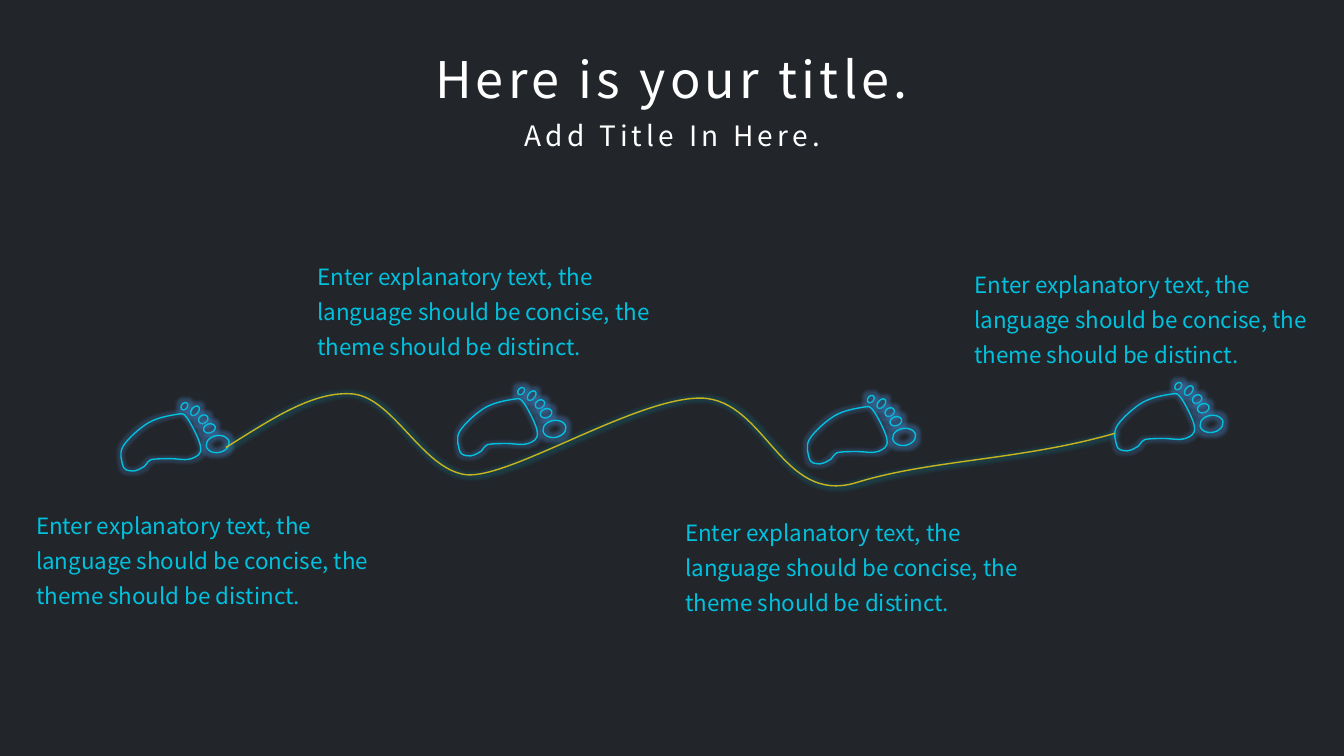
from lxml import etree
from pptx import Presentation
from pptx.dml.color import RGBColor
from pptx.enum.shapes import MSO_SHAPE
from pptx.enum.text import PP_ALIGN
from pptx.oxml.ns import qn
from pptx.util import Pt

OVAL = MSO_SHAPE.OVAL
LEFT, CENTER = PP_ALIGN.LEFT, PP_ALIGN.CENTER

BACKGROUND = RGBColor(0x22, 0x25, 0x2A)
WHITE = RGBColor(0xFF, 0xFF, 0xFF)
CYAN = RGBColor(0x00, 0xC1, 0xDE)
YELLOW = RGBColor(0xC8, 0xB4, 0x1E)
TOE_GLOW = RGBColor(0x44, 0x82, 0xC4)
FONT = "Noto Sans CJK SC"

# Content; every length is in points
TITLE = ("Here is your title.", (270.7, 31, 418.3, 51.1), 36)
SUBTITLE = ("Add Title In Here.", (347, 81.4, 266.4, 31.7), 20)
EXPLANATION = ("Enter explanatory text, the language should be concise, "
               "the theme should be distinct.")
EXPLANATION_SIZE = (269.3, 55.4)

# Each step: corner of the footprint, corner of its explanation
STEPS = [
    ((94.3, 290.9), (18.7, 356.4)),
    ((334.8, 280.1), (219.6, 178.6)),
    ((584.6, 285.8), (482.4, 361.4)),
    ((804.2, 276.5), (689, 184.3)),
]

# Each toe: left, top, width, height, rotation, relative to the footprint
TOES = [
    (35.3, -3.6, 4.3, 5.8, 38.7),
    (42.5, -1.4, 5, 7.9, 38.7),
    (48, 5, 5.8, 7.2, 54.8),
    (52, 10.8, 6.5, 8.6, 71.4),
    (55.1, 18, 12.2, 16.6, 79.7),
]

# Bezier outlines: a start point, then three points for each curve
SOLE = [
    (39.6, 7.9),
    (36.7, 4.3), (36.7, 4.3), (32.4, 5),
    (27.4, 5.8), (18.7, 7.2), (12.2, 10.8),
    (5.8, 14.4), (-3.6, 23), (-6.5, 28.1),
    (-9.4, 33.1), (-7.2, 38.9), (-6.5, 41.8),
    (-5.8, 44.6), (-2.9, 45.4), (-0.7, 45.4),
    (1.4, 46.1), (5, 44.6), (7.2, 43.2),
    (10.1, 42.5), (10.1, 38.9), (13.7, 37.4),
    (17.3, 36.7), (23, 36.7), (27.4, 36.7),
    (32.4, 36.7), (38.9, 38.2), (42.5, 36.7),
    (46.1, 35.3), (49.7, 33.8), (49, 28.8),
    (49, 24.5), (42.5, 12.2), (39.6, 7.9),
]
TRAIL = [
    (161.3, 319.7),
    (193, 300.2), (223.9, 278.6), (252.7, 281.5),
    (281.5, 285.1), (301.7, 334.8), (332.6, 339.1),
    (363.6, 342.7), (454.3, 283.7), (501.1, 284.4),
    (547.2, 285.8), (558, 360.7), (611.3, 344.9),
    (664.6, 328.3), (728.6, 329), (796.3, 309.6),
]


def add_text(slide, text, box, size, color=WHITE, align=CENTER, tracking=0, spacing=None):
    frame = slide.shapes.add_textbox(*map(Pt, box)).text_frame
    frame.word_wrap = True
    paragraph = frame.paragraphs[0]
    paragraph.alignment = align
    paragraph.line_spacing = spacing
    run = paragraph.add_run()
    run.text = text
    run.font.size = Pt(size)
    run.font.color.rgb = color
    run.font.name = FONT
    properties = run.font._element
    east_asian = etree.SubElement(properties, qn("a:ea"))
    east_asian.set("typeface", FONT)
    if tracking:
        properties.set("spc", str(tracking * 100))


def style_outline(shape, color, glow, radius, opacity):
    """Leave only a thin line with a soft glow around it."""
    shape.fill.background()
    shape.line.color.rgb = color
    shape.line.width = Pt(1)
    shape.shadow.inherit = False
    effects = shape._element.spPr.find(qn("a:effectLst"))
    halo = etree.SubElement(effects, qn("a:glow"), rad=str(Pt(radius)))
    tint = etree.SubElement(halo, qn("a:srgbClr"), val=str(glow))
    etree.SubElement(tint, qn("a:alpha"), val=str(opacity * 1000))


def add_curve(shapes, points, origin=(0, 0), closed=False):
    """Draw Bezier curves by merging each three line segments into one curve."""
    start, *rest = [(Pt(origin[0] + x), Pt(origin[1] + y)) for x, y in points]
    builder = shapes.build_freeform(*start, scale=1)
    builder.add_line_segments(rest, close=closed)
    curve = builder.convert_to_shape()
    segments = list(curve._element.iter(qn("a:lnTo")))
    for first in range(0, len(segments), 3):
        bezier = etree.Element(qn("a:cubicBezTo"))
        segments[first].addprevious(bezier)
        for segment in segments[first:first + 3]:
            bezier.append(segment[0])
            segment.getparent().remove(segment)
    return curve


def add_footprint(slide, origin):
    foot = slide.shapes.add_group_shape().shapes
    for x, y, width, height, rotation in TOES:
        toe = foot.add_shape(OVAL, Pt(origin[0] + x), Pt(origin[1] + y),
                             Pt(width), Pt(height))
        toe.rotation = rotation
        style_outline(toe, CYAN, TOE_GLOW, radius=5, opacity=40)
    sole = add_curve(foot, SOLE, origin, closed=True)
    style_outline(sole, CYAN, TOE_GLOW, radius=4, opacity=25)


def main():
    deck = Presentation()
    deck.slide_width, deck.slide_height = Pt(960), Pt(540)
    slide = deck.slides.add_slide(deck.slide_layouts[6])
    slide.background.fill.solid()
    slide.background.fill.fore_color.rgb = BACKGROUND

    for heading in (TITLE, SUBTITLE):
        add_text(slide, *heading, tracking=3)
    for foot_corner, text_corner in STEPS:
        add_footprint(slide, foot_corner)
        add_text(slide, EXPLANATION, text_corner + EXPLANATION_SIZE, 16,
                 color=CYAN, align=LEFT, spacing=1.3)
    trail = add_curve(slide.shapes, TRAIL)
    style_outline(trail, YELLOW, CYAN, radius=5, opacity=15)

    deck.save("out.pptx")


if __name__ == "__main__":
    main()
